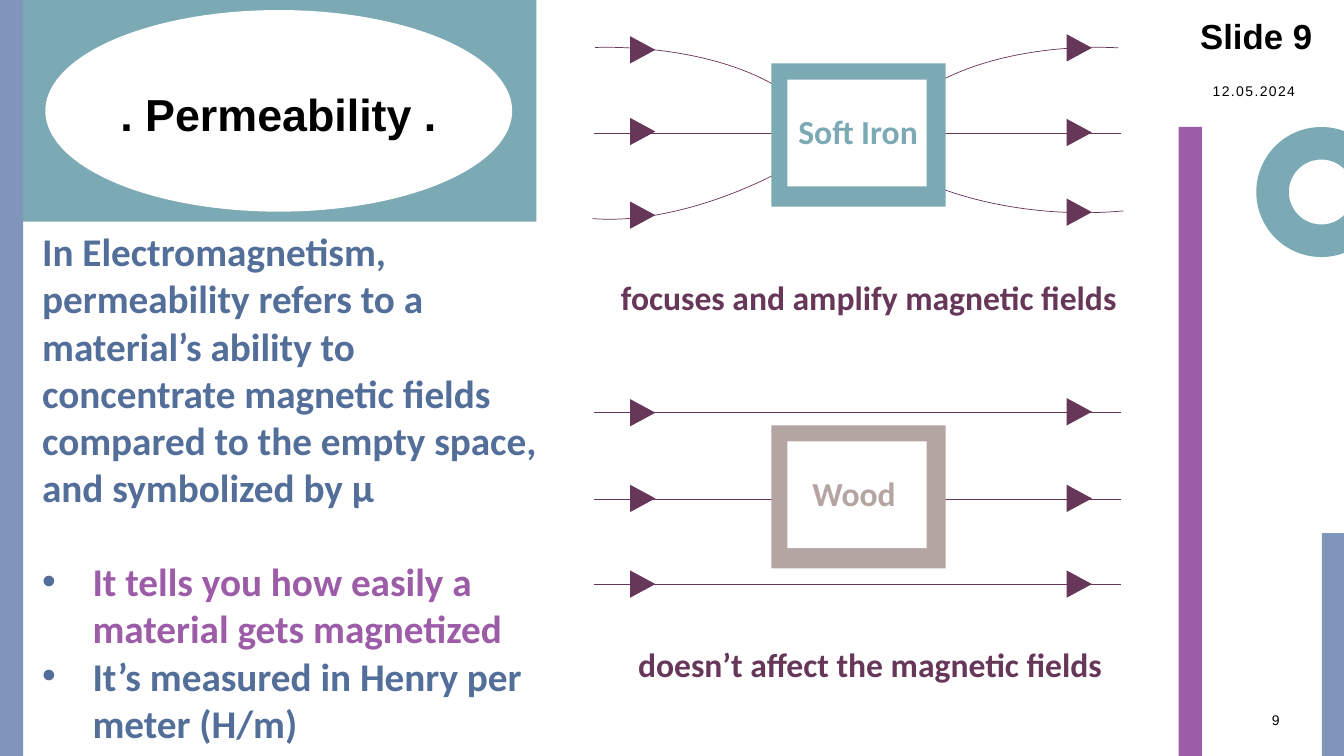
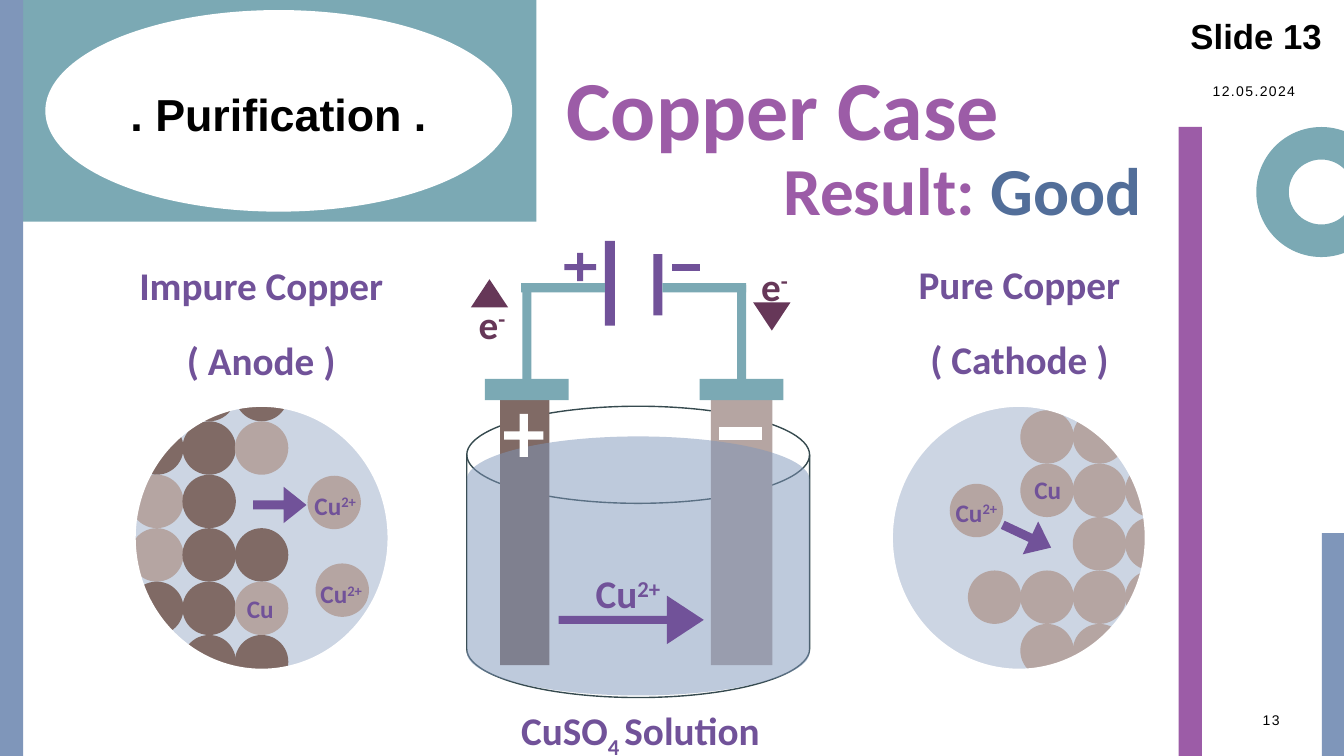
"""Build two physics slides: magnetic permeability and copper purification."""
import pptx
import pptx.dml.color
import pptx.enum.shapes
import pptx.enum.text
import pptx.oxml.ns
import pptx.util
from lxml import etree

RGB = pptx.dml.color.RGBColor
KIND = pptx.enum.shapes.MSO_SHAPE
ALIGN = pptx.enum.text.PP_ALIGN
ANCHOR = pptx.enum.text.MSO_ANCHOR
qn = pptx.oxml.ns.qn

PX = 9144
TEAL = RGB(0x7B, 0xA9, 0xB4)
STEEL = RGB(0x7F, 0x96, 0xBA)
BLUE = RGB(0x52, 0x6E, 0x99)
PURPLE = RGB(0x9C, 0x5C, 0xA7)
VIOLET = RGB(0x71, 0x52, 0x99)
PLUM = RGB(0x66, 0x37, 0x58)
SAND = RGB(0xB5, 0xA5, 0xA2)
BROWN = RGB(0x80, 0x6A, 0x65)
PALE = RGB(0xCC, 0xD5, 0xE3)
SLATE = RGB(0x36, 0x4A, 0x4F)
WHITE = RGB(0xFF, 0xFF, 0xFF)
BLACK = RGB(0, 0, 0)


def draw(page, kind, at, fill=None, line=None, width=1, turn=0, adjust=(), alpha=None):
    shape = page.shapes.add_shape(kind, *[n * PX for n in at])
    shape.shadow.inherit = False
    shape.rotation = turn
    for i, value in enumerate(adjust):
        shape.adjustments[i] = value
    if fill is None:
        shape.fill.background()
    else:
        shape.fill.solid()
        shape.fill.fore_color.rgb = fill
    if line is None:
        shape.line.fill.background()
    else:
        shape.line.color.rgb = line
        shape.line.width = pptx.util.Pt(width)
    if alpha:
        hue = shape.fill._xPr.find(".//" + qn("a:srgbClr"))
        etree.SubElement(hue, qn("a:alpha"), val=str(alpha * 1000))


def write(page, at, paras, size, color, font="Calibri", bold=True, align=ALIGN.LEFT,
          anchor=ANCHOR.MIDDLE, lead=1.3, gap=10, track=0):
    frame = page.shapes.add_textbox(*[n * PX for n in at]).text_frame
    frame.word_wrap = True
    frame.vertical_anchor = anchor
    for i, runs in enumerate(paras):
        para = frame.add_paragraph() if i else frame.paragraphs[0]
        para.alignment = align
        para.line_spacing = lead
        if i:
            para.space_before = pptx.util.Pt(gap)
        for words, base, hue in runs:
            run = para.add_run()
            run.text = words
            run.font.size = pptx.util.Pt(size)
            run.font.name = font
            run.font.bold = bold
            run.font.color.rgb = hue or color
            if base:
                run.font._element.set("baseline", str(base * 1000))
            if track:
                run.font._element.set("spc", str(track * 100))
    return frame


deck = pptx.Presentation()
deck.slide_width = 1333 * PX
deck.slide_height = 750 * PX

pages = []
for title, number in ((". Permeability .", 9), (". Purification .", 13)):
    page = deck.slides.add_slide(deck.slide_layouts[6])
    pages.append(page)
    draw(page, KIND.RECTANGLE, (1311, 529, 22, 221), STEEL)
    draw(page, KIND.RECTANGLE, (23, 0, 509, 220), TEAL)
    draw(page, KIND.RECTANGLE, (0, 0, 23, 750), STEEL)
    draw(page, KIND.OVAL, (45, 10, 463, 200), WHITE)
    draw(page, KIND.DONUT, (1246, 126, 129, 129), TEAL)
    write(page, (45, 13, 463, 184), [[(title, 0, None)]], 32, BLACK, font="Arial",
          align=ALIGN.CENTER)
    write(page, (1158, 6, 176, 54), [[(f"Slide {number}", 0, None)]], 24.8, BLACK,
          font="Arial", align=ALIGN.CENTER, lead=1.1)
    write(page, (1193, 70, 140, 40), [[("12.05.2024", 0, None)]], 10, BLACK,
          font="Arial", bold=False, lead=1, track=1)
    write(page, (1221, 694, 58, 40), [[(str(number), 0, None)]], 10, BLACK,
          font="Arial", bold=False, align=ALIGN.RIGHT, lead=1, track=1)

field, copper = pages

body = write(field, (32, 221, 516, 529), [
    [("In Electromagnetism, permeability refers to a material’s ability to "
      "concentrate magnetic fields compared to the empty space,", 0, None)],
    [("and symbolized by μ", 0, None)],
    [("It tells you how easily a material gets magnetized", 0, PURPLE)],
    [("It’s measured in Henry per meter (H/m)", 0, None)],
], 28, BLUE, anchor=ANCHOR.TOP, lead=1, gap=0)
body.paragraphs[2].space_before = pptx.util.Pt(34)
for para in body.paragraphs[2:]:
    props = para._p.get_or_add_pPr()
    props.set("marL", str(50 * PX))
    props.set("indent", str(-50 * PX))
    tint = etree.SubElement(props, qn("a:buClr"))
    etree.SubElement(tint, qn("a:srgbClr"), val=str(BLUE))
    etree.SubElement(props, qn("a:buFont"), typeface="Arial")
    etree.SubElement(props, qn("a:buChar"), char="•")

for at, turn, ends in (
    ((388, 47, 427, 200), 0, (158.133, 206.896)),
    ((875, 47, 427, 210), 0, (118.731, 168.772)),
    ((497, -10, 427, 200), 155.2, (151.095, 203.326)),
    ((837, 9, 425, 201), 184.3, (139.642, 199.366)),
):
    draw(field, KIND.ARC, at, line=PLUM, width=0.5, turn=turn, adjust=ends)

for y in (132, 409, 495, 580):
    wire = field.shapes.add_connector(pptx.enum.shapes.MSO_CONNECTOR.STRAIGHT,
                                      589 * PX, y * PX, 1112 * PX, y * PX)
    wire.line.color.rgb = PLUM
    wire.line.width = pptx.util.Pt(0.5)
    etree.SubElement(wire._element.spPr, qn("a:effectLst"))

for name, left, top, hue in (("Soft Iron", 782, 63, TEAL), ("Wood", 796, 422, SAND)):
    draw(field, KIND.RECTANGLE, (765, top, 173, 142), hue)
    draw(field, KIND.RECTANGLE, (781, top + 16, 138, 106), WHITE)
    write(field, (left, top + 42, 220, 50), [[(name, 0, None)]], 24, hue,
          anchor=ANCHOR.TOP, lead=1)

for x, tops in ((624, (37, 118, 201, 397, 482, 567)),
                (1057, (35, 119, 198, 396, 482, 567))):
    for y in tops:
        draw(field, KIND.ISOSCELES_TRIANGLE, (x, y, 27, 25), PLUM, turn=90)

for words, left, top in (("focuses and amplify magnetic fields", 606, 270),
                         ("doesn’t affect the magnetic fields", 623, 634)):
    write(field, (left, top, 538, 50), [[(words, 0, None)]], 24, PLUM,
          anchor=ANCHOR.TOP, lead=1)

draw(copper, KIND.FLOWCHART_MAGNETIC_DISK, (463, 403, 340, 289), WHITE, line=SLATE)
draw(copper, KIND.RECTANGLE, (496, 388, 49, 272), BROWN)
draw(copper, KIND.RECTANGLE, (705, 388, 61, 272), SAND)
draw(copper, KIND.FLOWCHART_MAGNETIC_DISK, (463, 433, 340, 257), STEEL, alpha=50)

for at, hue in (
    ((694, 376, 83, 21), TEAL), ((481, 376, 83, 21), TEAL),
    ((600, 239, 10, 84), VIOLET), ((648, 252, 9, 61), VIOLET),
    ((731, 283, 9, 110), TEAL), ((518, 283, 9, 110), TEAL),
    ((517, 281, 83, 9), TEAL), ((657, 281, 83, 9), TEAL),
):
    draw(copper, KIND.RECTANGLE, at, hue)

for kind, at, hue, size in (
    (KIND.MATH_PLUS, (493, 403, 53, 58), WHITE, 0.155),
    (KIND.MATH_MINUS, (705, 372, 59, 116), WHITE, 0.111),
    (KIND.MATH_PLUS, (554, 246, 43, 38), VIOLET, 0.155),
    (KIND.MATH_MINUS, (662, 225, 37, 81), VIOLET, 0.078),
):
    draw(copper, kind, at, hue, adjust=(size,))

draw(copper, KIND.ISOSCELES_TRIANGLE, (467, 277, 37, 28), PLUM)
draw(copper, KIND.ISOSCELES_TRIANGLE, (747, 300, 37, 28), PLUM, turn=180)

HUES = {"D": BROWN, "L": SAND}
for pool, left, top, rows, loose in (
    (132, 129, 365, (".DD", "DDL", "LD.", "LDD", "DDL", ".DD"), ((305, 472), (313, 559))),
    (883, 960, 407, (".LL.", ".LLL", "..LL", "LLLL", ".LL."), ((942, 480),)),
):
    draw(copper, KIND.OVAL, (pool, 403, 257, 263), PALE)
    for r, row in enumerate(rows):
        for c, mark in enumerate(row):
            if mark in HUES:
                draw(copper, KIND.OVAL, (left + 52 * c, top + 53 * r, 53, 53), HUES[mark])
    for x, y in loose:
        draw(copper, KIND.OVAL, (x, y, 53, 53), SAND)
    draw(copper, KIND.DONUT, (pool - 67, 334, 389, 399), WHITE, adjust=(0.179,))

for at, turn, ends in (
    ((554, 591, 144, 48), 0, (0.169, 0.76)),
    ((251, 483, 53, 36), 0, (0.246, 0.627)),
    ((992, 514, 53, 36), 25.2, (0.246, 0.627)),
):
    draw(copper, KIND.RIGHT_ARROW, at, VIOLET, turn=turn, adjust=ends)

write(copper, (552, 11, 603, 160), [[("Copper Case", 0, None)]], 60, PURPLE)
write(copper, (767, 95, 420, 160),
      [[("Result: ", 0, None), ("Good", 0, BLUE)]], 48, PURPLE)

for at, base, sign, size, hue in (
    ((465, 213, 246, 203), "e", "-", 28, PLUM),
    ((745, 210, 90, 133), "e", "-", 28, PLUM),
    ((581, 480, 246, 203), "Cu", "2+", 28, VIOLET),
    ((302, 440, 99, 113), "Cu", "2+", 18, VIOLET),
    ((308, 528, 99, 113), "Cu", "2+", 18, VIOLET),
    ((235, 543, 99, 113), "Cu", "", 18, VIOLET),
    ((938, 447, 99, 113), "Cu", "2+", 18, VIOLET),
    ((1016, 425, 99, 113), "Cu", "", 18, VIOLET),
):
    runs = [(base, 0, None)]
    if sign:
        runs.append((sign, 30, None))
    write(copper, at, [runs], size, hue)

write(copper, (507, 690, 340, 59),
      [[("CuSO", 0, None), ("4 ", -25, None), ("Solution", 0, None)]], 28, VIOLET)

for left, top, metal, pole in ((103, 192, "Impure Copper", "( Anode )"),
                               (855, 191, "Pure Copper", "( Cathode )")):
    write(copper, (left, top, 312, 242), [[(metal, 0, None)], [(pole, 0, None)]],
          28, VIOLET, align=ALIGN.CENTER)

for page in pages:
    draw(page, KIND.RECTANGLE, (1169, 126, 23, 624), PURPLE)

deck.save("out.pptx")
